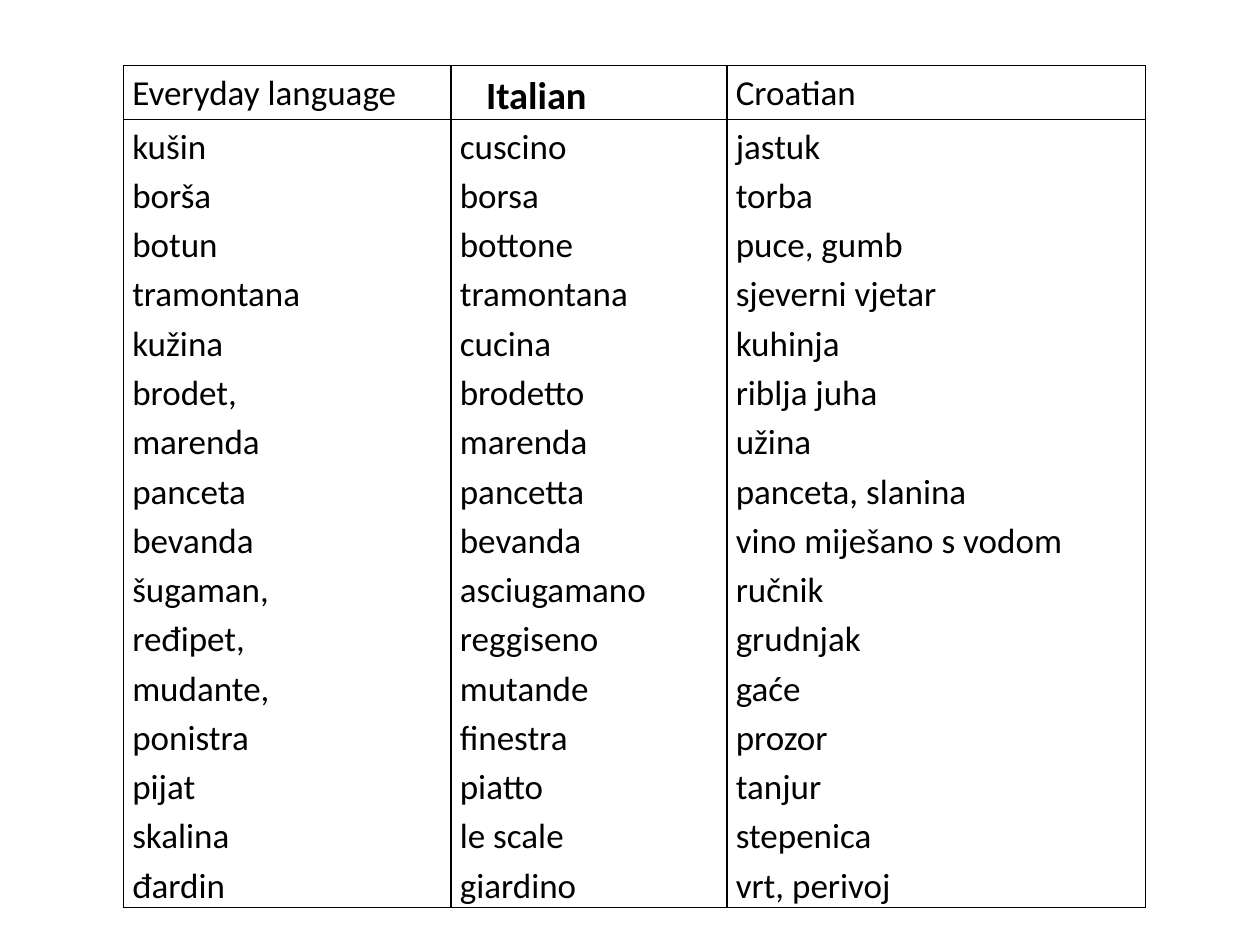
"""Build a slide comparing everyday, Italian and Croatian words."""
import lxml.etree
import pptx
import pptx.dml.color
import pptx.oxml.ns
import pptx.util

COLOURS = {"ink": "000000", "border": "000000"}
SLIDE_SIZE = (10, 7.5)
TABLE_ORIGIN = (0.98, 0.52)
COLUMN_WIDTHS = (2.6, 2.19, 3.32)
ROW_HEIGHTS = (0.39, 6.15)
HEADINGS = ("Everyday language", "Italian", "Croatian")
VOCABULARY = (
    ("kušin", "cuscino", "jastuk"),
    ("borša", "borsa", "torba"),
    ("botun", "bottone", "puce, gumb"),
    ("tramontana", "tramontana", "sjeverni vjetar"),
    ("kužina", "cucina", "kuhinja"),
    ("brodet,", "brodetto", "riblja juha"),
    ("marenda", "marenda", "užina"),
    ("panceta", "pancetta", "panceta, slanina"),
    ("bevanda", "bevanda", "vino miješano s vodom"),
    ("šugaman,", "asciugamano", "ručnik"),
    ("ređipet,", "reggiseno", "grudnjak"),
    ("mudante,", "mutande", "gaće"),
    ("ponistra", "finestra", "prozor"),
    ("pijat", "piatto", "tanjur"),
    ("skalina", "le scale", "stepenica"),
    ("đardin", "giardino", "vrt, perivoj"),
)
PLAIN = {"name": "Calibri", "size": pptx.util.Pt(20), "bold": False}
EMPHASIS = {**PLAIN, "size": pptx.util.Pt(22), "bold": True}
MARGINS = {
    "margin_left": pptx.util.Inches(0.07),
    "margin_right": pptx.util.Inches(0.07),
    "margin_top": 0,
    "margin_bottom": 0,
}


def apply_format(target, values):
    """Set each named attribute on the target."""
    for attribute, value in values.items():
        setattr(target, attribute, value)


def draw_borders(cell):
    """Draw a one-point line on every side of a cell."""
    qn = pptx.oxml.ns.qn
    properties = cell._tc.get_or_add_tcPr()
    for side in ("a:lnL", "a:lnR", "a:lnT", "a:lnB"):
        line = lxml.etree.SubElement(properties, qn(side), w=str(pptx.util.Pt(1)))
        fill = lxml.etree.SubElement(line, qn("a:solidFill"))
        lxml.etree.SubElement(fill, qn("a:srgbClr"), val=COLOURS["border"])


def write_cell(cell, lines, font_format, indent=0):
    """Fill a bordered cell with one paragraph per line."""
    draw_borders(cell)
    cell.fill.background()
    apply_format(cell, MARGINS)
    cell.text_frame.text = "\n".join(lines)
    for paragraph in cell.text_frame.paragraphs:
        paragraph.line_spacing = 1.15
        if indent:
            paragraph._p.get_or_add_pPr().set("marL", str(pptx.util.Pt(indent)))
        for run in paragraph.runs:
            apply_format(run.font, font_format)
            run.font.color.rgb = pptx.dml.color.RGBColor.from_string(COLOURS["ink"])


def add_vocabulary_table(slide):
    """Add the table with one heading and one word list per language."""
    extent = (sum(COLUMN_WIDTHS), sum(ROW_HEIGHTS))
    frame = slide.shapes.add_table(
        len(ROW_HEIGHTS), len(COLUMN_WIDTHS),
        *map(pptx.util.Inches, TABLE_ORIGIN + extent),
    )
    vocabulary = frame.table
    apply_format(vocabulary, {"first_row": False, "horz_banding": False})
    for column, width in zip(vocabulary.columns, COLUMN_WIDTHS):
        column.width = pptx.util.Inches(width)
    for row, height in zip(vocabulary.rows, ROW_HEIGHTS):
        row.height = pptx.util.Inches(height)
    for index, (heading, words) in enumerate(zip(HEADINGS, zip(*VOCABULARY))):
        emphasised = heading == "Italian"
        write_cell(vocabulary.cell(0, index), [heading],
                   EMPHASIS if emphasised else PLAIN, 15 if emphasised else 0)
        write_cell(vocabulary.cell(1, index), words, PLAIN)


def main():
    """Create and save the presentation."""
    presentation = pptx.Presentation()
    presentation.slide_width, presentation.slide_height = map(
        pptx.util.Inches, SLIDE_SIZE)
    slide = presentation.slides.add_slide(presentation.slide_layouts[6])
    add_vocabulary_table(slide)
    presentation.save("out.pptx")


if __name__ == "__main__":
    main()
